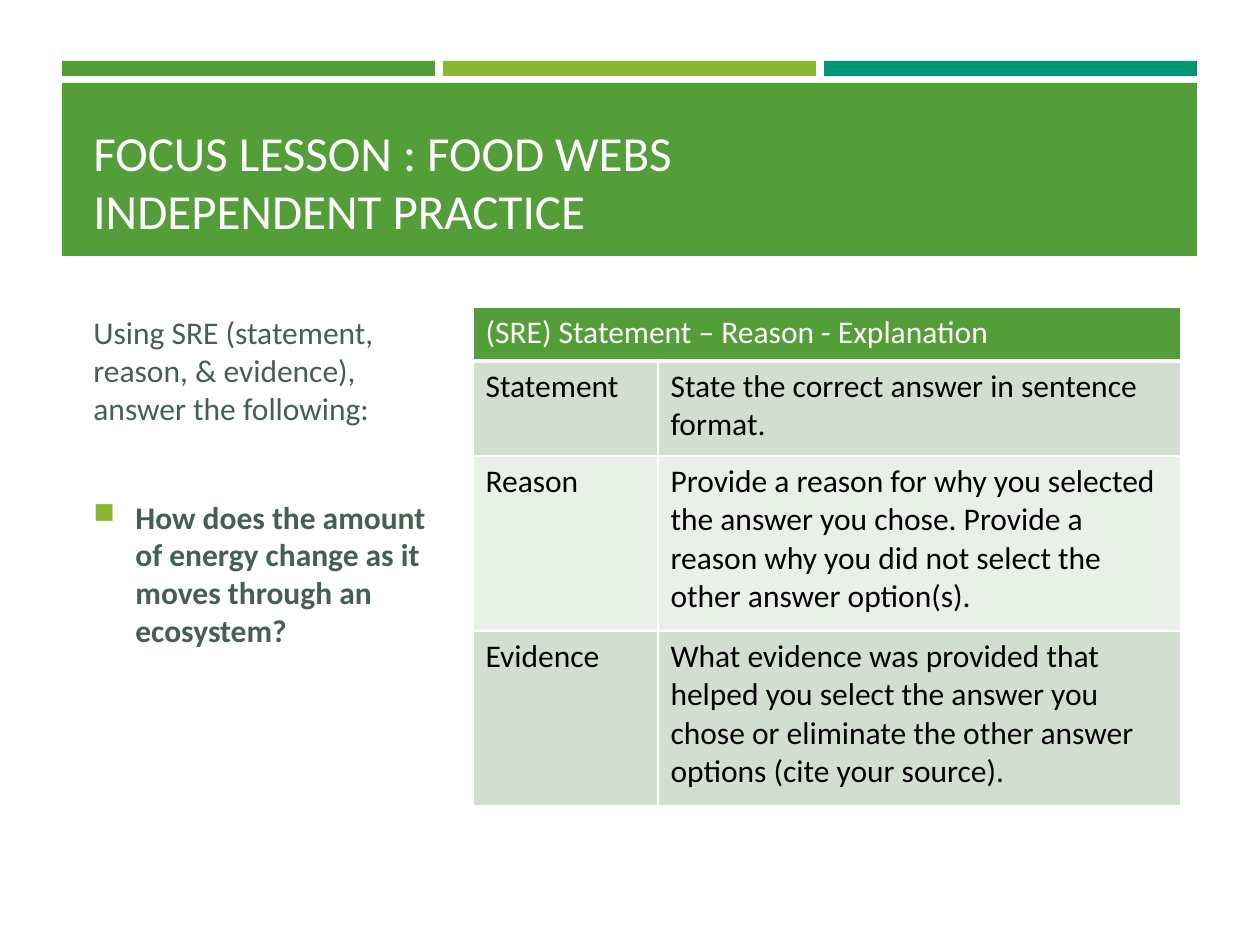
from dataclasses import dataclass

import pptx
import pptx.dml.color
import pptx.enum.shapes
import pptx.enum.text
import pptx.oxml.ns
import pptx.util
from lxml import etree

SCALE = 914400 / 126


@dataclass(frozen=True)
class Theme:
    font: str = "Calibri"
    head: int = 28
    body: int = 18
    green: str = "549E39"
    lime: str = "8AB833"
    teal: str = "029676"
    slate: str = "455F51"
    white: str = "FFFFFF"
    black: str = "000000"
    band: str = "D1DFCE"
    pale: str = "E9F0E8"


@dataclass(frozen=True)
class Box:
    left: int
    top: int
    width: int
    height: int


@dataclass(frozen=True)
class Row:
    height: int
    label: str
    text: str
    fill: str


THEME = Theme()
BANNER = Box(62, 83, 1135, 173)
BARS = [
    (Box(62 + 381 * i, 61, 373, 15), color)
    for i, color in enumerate((THEME.green, THEME.lime, THEME.teal))
] + [(BANNER, THEME.green)]
TITLE = Box(81, 97, 1101, 149)
PROMPT = Box(81, 307, 371, 500)
GRID = Box(473, 307, 708, 499)
COLS = (185, 523)
ROWS = [
    Row(54, "(SRE) Statement – Reason - Explanation", "", THEME.green),
    Row(95, "Statement", "State the correct answer in sentence format.", THEME.band),
    Row(175, "Reason", "Provide a reason for why you selected the answer you chose. "
        "Provide a reason why you did not select the other answer option(s).", THEME.pale),
    Row(175, "Evidence", "What evidence was provided that helped you select the answer "
        "you chose or eliminate the other answer options (cite your source).", THEME.band),
]


def px(size: int) -> pptx.util.Emu:
    return pptx.util.Emu(round(size * SCALE))


def place(box: Box) -> tuple:
    return px(box.left), px(box.top), px(box.width), px(box.height)


def rgb(color: str) -> pptx.dml.color.RGBColor:
    return pptx.dml.color.RGBColor.from_string(color)


def node(root, tag: str, **attrs: str):
    return etree.SubElement(root, pptx.oxml.ns.qn(tag), attrs)


def style(para, size: int, color: str, bold: bool = False) -> None:
    font = para.font
    font.name = THEME.font
    font.size = pptx.util.Pt(size)
    font.bold = bold
    font.color.rgb = rgb(color)


def bar(slide, box: Box, color: str) -> None:
    shape = slide.shapes.add_shape(pptx.enum.shapes.MSO_SHAPE.RECTANGLE, *place(box))
    shape.shadow.inherit = False
    shape.fill.solid()
    shape.fill.fore_color.rgb = rgb(color)
    shape.line.fill.background()


def frame(slide, box: Box):
    text = slide.shapes.add_textbox(*place(box)).text_frame
    text.word_wrap = True
    return text


def bullet(para, color: str) -> None:
    props = para._p.get_or_add_pPr()
    props.set("marL", str(px(42)))
    props.set("indent", str(px(-42)))
    node(node(props, "a:buClr"), "a:srgbClr", val=color)
    node(props, "a:buSzPct", val="92000")
    node(props, "a:buChar", char="■")


def edge(cell, first: bool) -> None:
    props = cell._tc.get_or_add_tcPr()
    for side in ("L", "R", "T", "B"):
        width = 3 if first and side == "B" else 1
        line = node(props, f"a:ln{side}", w=str(pptx.util.Pt(width)))
        node(node(line, "a:solidFill"), "a:srgbClr", val=THEME.white)


def table(slide, box: Box, cols: tuple, rows: list) -> None:
    grid = slide.shapes.add_table(len(rows), len(cols), *place(box)).table
    grid.first_row = grid.horz_banding = False
    for col, width in zip(grid.columns, cols):
        col.width = px(width)
    for i, row in enumerate(rows):
        grid.rows[i].height = px(row.height)
        for cell, text in zip(grid.rows[i].cells, (row.label, row.text)):
            edge(cell, i == 0)
            cell.fill.solid()
            cell.fill.fore_color.rgb = rgb(row.fill)
            cell.text = text
            color = THEME.black if i else THEME.white
            style(cell.text_frame.paragraphs[0], THEME.body, color)
    grid.cell(0, 0).merge(grid.cell(0, 1))


def main() -> None:
    deck = pptx.Presentation()
    deck.slide_width, deck.slide_height = px(1260), px(945)
    slide = deck.slides.add_slide(deck.slide_layouts[6])
    for box, color in BARS:
        bar(slide, box, color)

    title = frame(slide, TITLE)
    title.vertical_anchor = pptx.enum.text.MSO_ANCHOR.BOTTOM
    title.text = "FOCUS LESSON : FOOD WEBS\vINDEPENDENT PRACTICE"
    style(title.paragraphs[0], THEME.head, THEME.white)

    prompt = frame(slide, PROMPT)
    prompt.text = "Using SRE (statement, reason, & evidence), answer the following:"
    style(prompt.paragraphs[0], THEME.body, THEME.slate)
    task = prompt.add_paragraph()
    task.text = "How does the amount of energy change as it moves through an ecosystem?"
    task.space_before = pptx.util.Pt(40.5)
    bullet(task, THEME.lime)
    style(task, THEME.body, THEME.slate, bold=True)

    table(slide, GRID, COLS, ROWS)
    deck.save("out.pptx")


if __name__ == "__main__":
    main()
